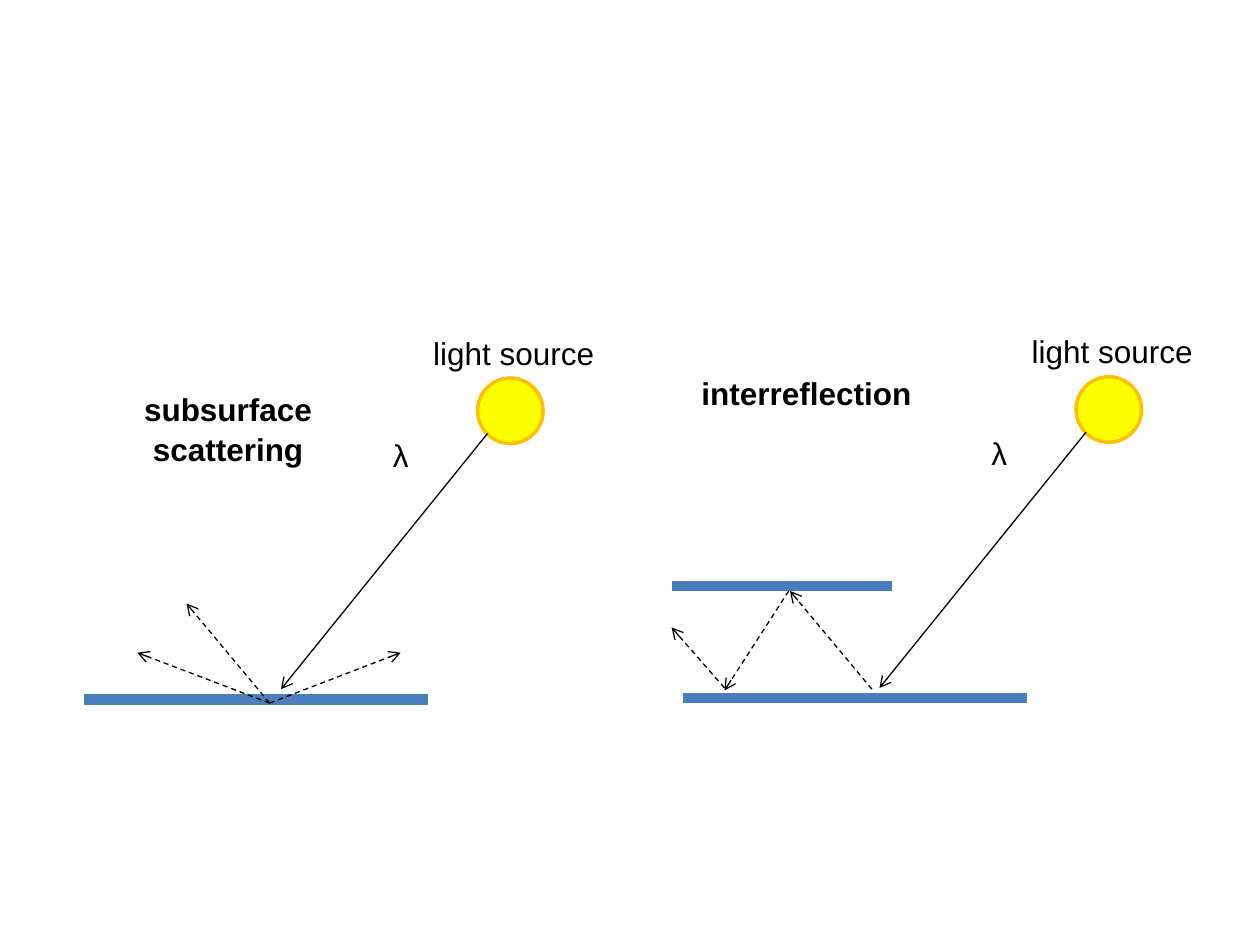
import pptx
import pptx.util
import pptx.dml.color
import pptx.enum.dml
import pptx.enum.shapes
import pptx.enum.text
import pptx.oxml.ns
import lxml.etree

Inches = pptx.util.Inches
Pt = pptx.util.Pt
RGB = pptx.dml.color.RGBColor

BLACK = RGB(0, 0, 0)
BLUE = RGB(0x4B, 0x7E, 0xBC)
YELLOW = RGB(0xFF, 0xFF, 0)
GOLD = RGB(0xFF, 0xC0, 0)


def add_line(slide, box, start, end, color=BLACK, width=0.75):
    left, top = box
    line = slide.shapes.add_connector(
        pptx.enum.shapes.MSO_CONNECTOR.STRAIGHT,
        Inches(left + start[0]), Inches(top + start[1]),
        Inches(left + end[0]), Inches(top + end[1]))
    line.line.color.rgb = color
    line.line.width = Pt(width)
    props = line._element.spPr
    lxml.etree.SubElement(props, pptx.oxml.ns.qn("a:effectLst"))
    return line


def add_ray(slide, box, start, end, dashed=True):
    """Draw a thin line with an open arrowhead at its end."""
    ray = add_line(slide, box, start, end)
    if dashed:
        ray.line.dash_style = pptx.enum.dml.MSO_LINE.DASH
    tail = lxml.etree.SubElement(
        ray.line._get_or_add_ln(), pptx.oxml.ns.qn("a:tailEnd"))
    tail.set("type", "arrow")


def add_plate(slide, box, start, width):
    add_line(slide, box, start, (start[0] + width, start[1]), BLUE, 6)


def add_text(slide, box, place, words, title=False):
    left, top, width, height = place
    label = slide.shapes.add_textbox(
        Inches(box[0] + left), Inches(box[1] + top),
        Inches(width), Inches(height))
    frame = label.text_frame
    frame.word_wrap = True
    para = frame.paragraphs[0]
    para.line_spacing = 1.06
    if title:
        para.alignment = pptx.enum.text.PP_ALIGN.CENTER
    run = para.add_run()
    run.text = words
    run.font.name = "Arial"
    run.font.size = Pt(18)
    run.font.bold = title
    run.font.color.rgb = BLACK


def add_scene(slide, box):
    """Draw the lower plate, the lamp and its beam, shared by both panels."""
    add_plate(slide, box, (0, 2.97), 2.73)
    lamp = slide.shapes.add_shape(
        pptx.enum.shapes.MSO_SHAPE.OVAL,
        Inches(box[0] + 3.12), Inches(box[1] + 0.42),
        Inches(0.52), Inches(0.52))
    lamp.shadow.inherit = False
    lamp.fill.solid()
    lamp.fill.fore_color.rgb = YELLOW
    lamp.line.color.rgb = GOLD
    lamp.line.width = Pt(2)
    add_ray(slide, box, (3.2, 0.86), (1.56, 2.89), dashed=False)
    add_text(slide, box, (2.35, 0.81, 0.51, 0.63), "λ")
    add_text(slide, box, (2.67, 0, 1.5, 0.42), "light source")


def add_scatter(slide, box):
    add_scene(slide, box)
    for end in ((0.81, 2.21), (0.42, 2.6), (2.51, 2.6)):
        add_ray(slide, box, (1.47, 3), end)
    add_text(slide, box, (0.18, 0.45, 1.92, 0.71),
             "subsurface scattering", title=True)


def add_bounce(slide, box):
    add_scene(slide, box)
    add_plate(slide, box, (-0.09, 2.08), 1.75)
    for start, end in (((1.5, 2.9), (0.85, 2.12)),
                       ((0.84, 2.12), (0.33, 2.91)),
                       ((0.33, 2.89), (-0.09, 2.41))):
        add_ray(slide, box, start, end)
    add_text(slide, box, (0.02, 0.33, 1.92, 0.4),
             "interreflection", title=True)


def main():
    deck = pptx.Presentation()
    deck.slide_width = Inches(10)
    deck.slide_height = Inches(7.5)
    slide = deck.slides.add_slide(deck.slide_layouts[6])
    add_scatter(slide, (0.67, 2.58))
    add_bounce(slide, (5.42, 2.57))
    deck.save("out.pptx")


if __name__ == "__main__":
    main()
